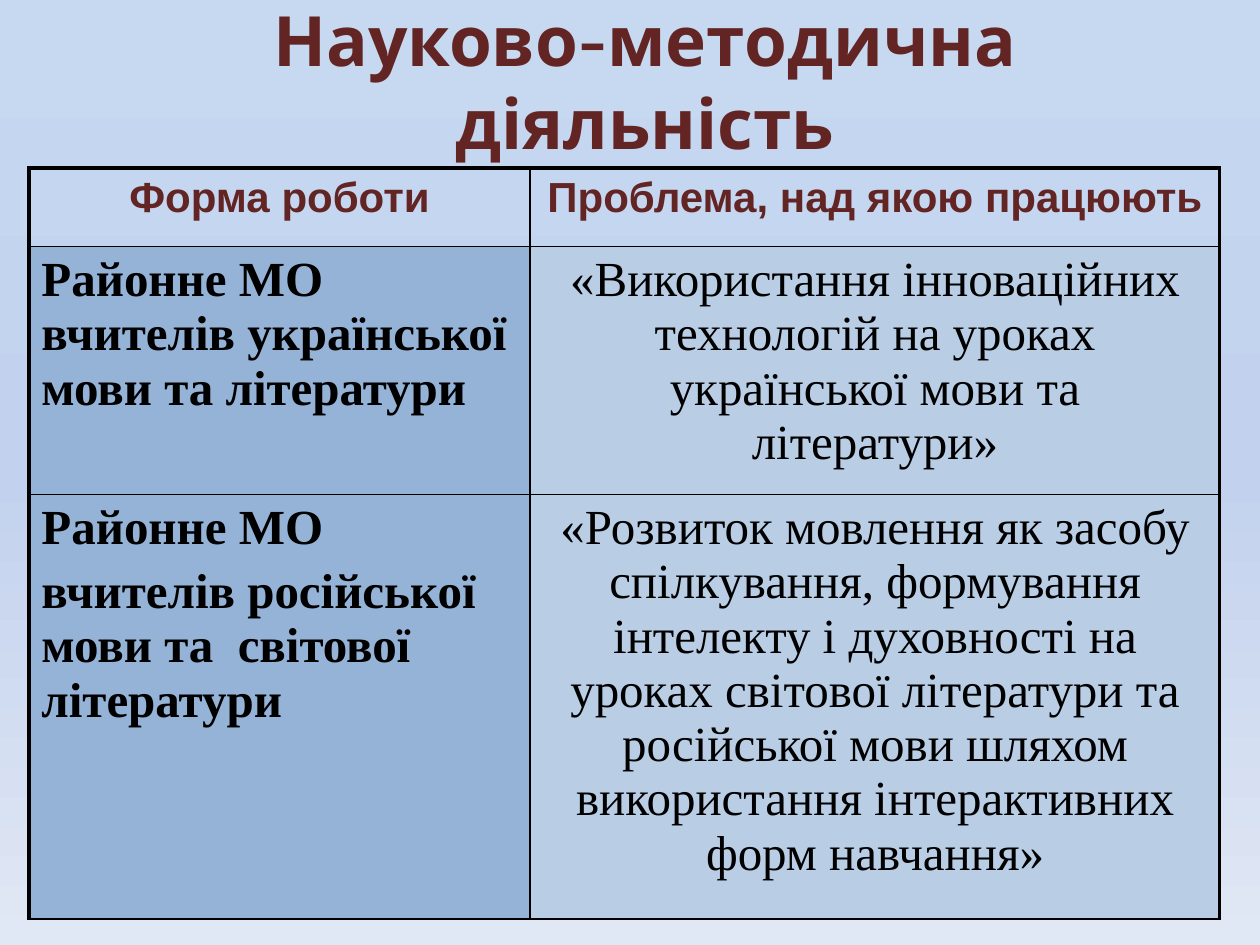
from lxml.etree import SubElement
from pptx import Presentation
from pptx.dml.color import RGBColor as RGB
from pptx.enum.text import MSO_ANCHOR as Anchor, PP_ALIGN as Align
from pptx.oxml.ns import qn
from pptx.util import Pt

TITLE = "Науково-методична діяльність"
HEADER = ["Форма роботи", "Проблема, над якою працюють"]
ROWS = [
    (["Районне МО вчителів української мови та літератури"],
     ["«Використання інноваційних технологій на уроках української мови "
      "та літератури»"]),
    (["Районне МО", "вчителів російської мови та  світової літератури"],
     ["«Розвиток мовлення як засобу спілкування, формування інтелекту і "
      "духовності на уроках світової літератури та російської мови шляхом "
      "використання інтерактивних форм навчання»"]),
]
COL_WIDTHS = [286.5, 394]
ROW_HEIGHTS = [45, 131, 224]
TABLE_LEFT, TABLE_TOP = 16.5, 96

THEME = {
    "background": [(0, "C6D9F1"), (50, "C2D1ED"), (100, "E1E8F5")],
    "title": dict(font="Cabin", size=39.6, color="632523", bold=True, align=Align.CENTER),
    "header": dict(font="Arial", size=24, color="632523", bold=True, align=Align.CENTER),
    "form": dict(font="Times New Roman", size=28, color="000000", bold=True, align=Align.LEFT),
    "problem": dict(font="Times New Roman", size=28, color="000000", bold=False, align=Align.CENTER),
    "form_fill": "95B3D7",
    "problem_fill": "B9CDE5",
    "border": "000000",
    "outer": 2.25,
    "inner": 1,
}


def write(tf, paragraphs, font, size, color, bold, align):
    tf.word_wrap = True
    for i, text in enumerate(paragraphs):
        p = tf.paragraphs[0] if i == 0 else tf.add_paragraph()
        p.alignment = align
        if i:
            p.space_before = Pt(size * 0.2)
        r = p.add_run()
        r.text = text
        r.font.name, r.font.size, r.font.bold = font, Pt(size), bold
        r.font.color.rgb = RGB.from_string(color)


def paint_background(slide, stops):
    fill = slide.background.fill
    fill.gradient()
    fill.gradient_angle = 270
    stop_list = next(slide._element.iter(qn("a:gsLst")))
    for old in list(stop_list):
        stop_list.remove(old)
    for percent, color in stops:
        stop = SubElement(stop_list, qn("a:gs"), pos=str(percent * 1000))
        SubElement(stop, qn("a:srgbClr"), val=color)


def set_borders(cell, widths):
    """Draw the cell's sides; widths maps L, R, T and B to points."""
    props = cell._tc.get_or_add_tcPr()
    for i, (side, width) in enumerate(widths.items()):
        line = props.makeelement(qn(f"a:ln{side}"), {"w": str(Pt(width))})
        fill = SubElement(line, qn("a:solidFill"))
        SubElement(fill, qn("a:srgbClr"), val=THEME["border"])
        props.insert(i, line)


def add_title(slide):
    tf = slide.shapes.add_textbox(Pt(44.5), Pt(0), Pt(648), Pt(92)).text_frame
    tf.vertical_anchor = Anchor.MIDDLE
    write(tf, [TITLE], **THEME["title"])


def add_work_table(slide):
    content = [[[text] for text in HEADER], *ROWS]
    table = slide.shapes.add_table(
        len(content), len(HEADER), Pt(TABLE_LEFT), Pt(TABLE_TOP),
        Pt(sum(COL_WIDTHS)), Pt(sum(ROW_HEIGHTS))).table
    table.first_row = table.horz_banding = False
    for column, width in zip(table.columns, COL_WIDTHS):
        column.width = Pt(width)
    for row, height in zip(table.rows, ROW_HEIGHTS):
        row.height = Pt(height)

    outer, inner = THEME["outer"], THEME["inner"]
    for r, row in enumerate(content):
        for c, paragraphs in enumerate(row):
            cell = table.cell(r, c)
            kind = ("form", "problem")[c]
            if r == 0:
                cell.fill.background()
            else:
                cell.fill.solid()
                cell.fill.fore_color.rgb = RGB.from_string(THEME[f"{kind}_fill"])
            write(cell.text_frame, paragraphs, **THEME[kind if r else "header"])
            set_borders(cell, {
                "L": outer if c == 0 else inner,
                "R": outer if c == len(row) - 1 else inner,
                "T": outer if r == 0 else inner,
                "B": inner,
            })


def main():
    prs = Presentation()
    prs.slide_width, prs.slide_height = Pt(720), Pt(540)
    slide = prs.slides.add_slide(prs.slide_layouts[6])
    paint_background(slide, THEME["background"])
    add_title(slide)
    add_work_table(slide)
    prs.save("out.pptx")


if __name__ == "__main__":
    main()
